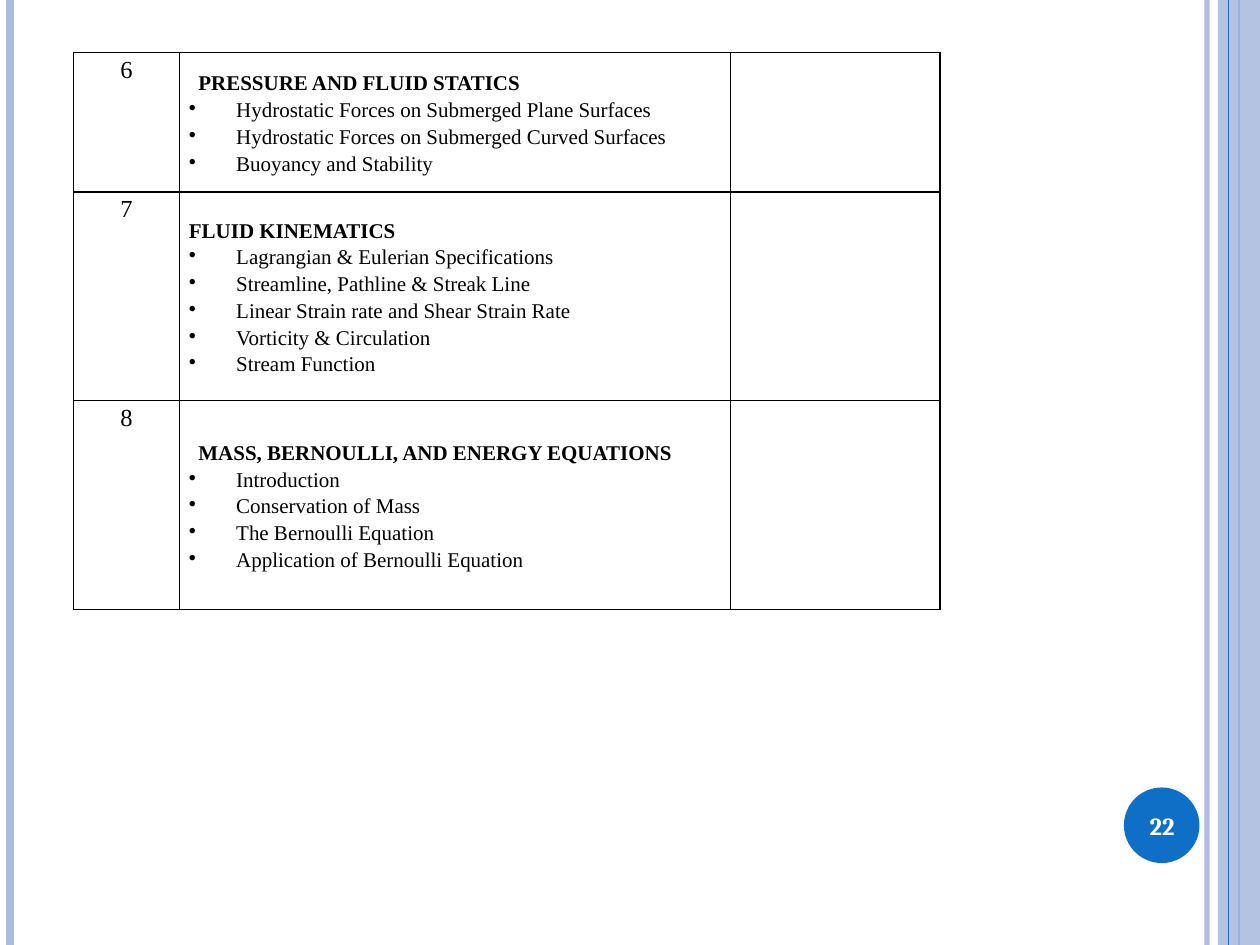
from lxml.etree import SubElement
from pptx import Presentation
from pptx.dml.color import RGBColor
from pptx.enum.shapes import MSO_CONNECTOR as CONNECTOR, MSO_SHAPE as SHAPE
from pptx.enum.text import MSO_ANCHOR as ANCHOR, PP_ALIGN as ALIGN
from pptx.oxml.ns import qn
from pptx.util import Pt

WIDTH, HEIGHT = 720, 540
BLUE, PALE, BLACK, WHITE = "0F6FC6", "ABBBDF", "000000", "FFFFFF"


def paint(color_format, hex_color, opacity=100):
    """Set a solid colour on a fill, line fill or font fill, with opacity in percent."""
    color_format.solid()
    color_format.fore_color.rgb = RGBColor.from_string(hex_color)
    if opacity < 100:
        color = color_format._xPr.find(qn("a:solidFill"))[0]
        SubElement(color, qn("a:alpha"), val=str(opacity * 1000))


def style_text(paragraph, size, bold=False, color=BLACK, font="Times New Roman"):
    for run in paragraph.runs:
        run.font.size, run.font.bold, run.font.name = Pt(size), bold, font
        paint(run.font.fill, color)


prs = Presentation()
prs.slide_width, prs.slide_height = Pt(WIDTH), Pt(HEIGHT)
slide = prs.slides.add_slide(prs.slide_layouts[6])
shapes = slide.shapes

# Side stripes: the band covers all but the last one
stripes = [(689.75, PALE, 3, 93), (5.95, PALE, 4.5, 100),
           (708, BLUE, 1.5, 100), (702, BLUE, 0.75, 100)]
for x, color, weight, opacity in stripes:
    if x == 702:
        band = shapes.add_shape(SHAPE.RECTANGLE, Pt(696), 0, Pt(24), Pt(HEIGHT))
        band.shadow.inherit = False
        paint(band.fill, PALE, 87)
        band.line.fill.background()
    stripe = shapes.add_connector(CONNECTOR.STRAIGHT, Pt(x), 0, Pt(x), Pt(HEIGHT))
    stripe.line.width = Pt(weight)
    paint(stripe.line.fill, color, opacity)
    SubElement(stripe._element.spPr, qn("a:effectLst"))

# Page number badge
badge = shapes.add_shape(SHAPE.OVAL, Pt(642.25), Pt(450), Pt(43.2), Pt(43.2))
badge.shadow.inherit = False
paint(badge.fill, BLUE)
badge.line.fill.background()

# Course outline: number, heading, heading indent, topics
units = [
    ("6", "PRESSURE AND FLUID STATICS", 5.4,
     ["Hydrostatic Forces on Submerged Plane Surfaces",
      "Hydrostatic Forces on Submerged Curved Surfaces",
      "Buoyancy and Stability"]),
    ("7", "FLUID KINEMATICS", 0,
     ["Lagrangian & Eulerian Specifications",
      "Streamline, Pathline & Streak Line",
      "Linear Strain rate and Shear Strain Rate",
      "Vorticity & Circulation",
      "Stream Function"]),
    ("8", "MASS, BERNOULLI, AND ENERGY EQUATIONS", 5.4,
     ["Introduction",
      "Conservation of Mass",
      "The Bernoulli Equation",
      "Application of Bernoulli Equation"]),
]
column_widths = [60.6, 314.8, 119.8]
row_heights = [79.6, 119.4, 119.4]

outline = shapes.add_table(len(units), len(column_widths), Pt(42), Pt(30),
                           Pt(sum(column_widths)), Pt(sum(row_heights))).table
outline.first_row = outline.horz_banding = False
for column, width in zip(outline.columns, column_widths):
    column.width = Pt(width)
for row, height in zip(outline.rows, row_heights):
    row.height = Pt(height)

for cell in outline.iter_cells():
    cell.margin_left = cell.margin_right = Pt(5.4)
    cell.margin_top = cell.margin_bottom = 0
    cell.fill.background()
    properties = cell._tc.get_or_add_tcPr()
    for position, side in enumerate(["lnL", "lnR", "lnT", "lnB"]):
        border = SubElement(properties, qn(f"a:{side}"), w=str(Pt(1)))
        border_fill = SubElement(border, qn("a:solidFill"))
        SubElement(border_fill, qn("a:srgbClr"), val=BLACK)
        properties.insert(position, border)

for row, (number, heading, heading_indent, topics) in enumerate(units):
    number_cell, content_cell = outline.cell(row, 0), outline.cell(row, 1)
    number_cell.text_frame.text = number
    number_line = number_cell.text_frame.paragraphs[0]
    number_line.alignment = ALIGN.CENTER
    number_line.line_spacing = 1.15
    number_line.space_before = number_line.space_after = Pt(6)
    style_text(number_line, 14)

    content_cell.vertical_anchor = ANCHOR.MIDDLE
    content_cell.text_frame.text = "\n".join([heading, *topics])
    for index, line in enumerate(content_cell.text_frame.paragraphs):
        line.line_spacing = 1.15
        style_text(line, 12, bold=index == 0)
        layout = line._p.get_or_add_pPr()
        if index == 0:
            layout.set("marL", str(Pt(heading_indent)))
        else:
            layout.set("marL", str(Pt(27)))
            layout.set("indent", str(Pt(-27)))
            SubElement(layout, qn("a:buChar"), char="•")

page_number = shapes.add_textbox(Pt(640), Pt(451.5), Pt(48), Pt(41)).text_frame
page_number.word_wrap = True
page_number.vertical_anchor = ANCHOR.MIDDLE
page_number.text = "22"
page_number.paragraphs[0].alignment = ALIGN.CENTER
style_text(page_number.paragraphs[0], 14, bold=True, color=WHITE, font="Cambria")

prs.save("out.pptx")
